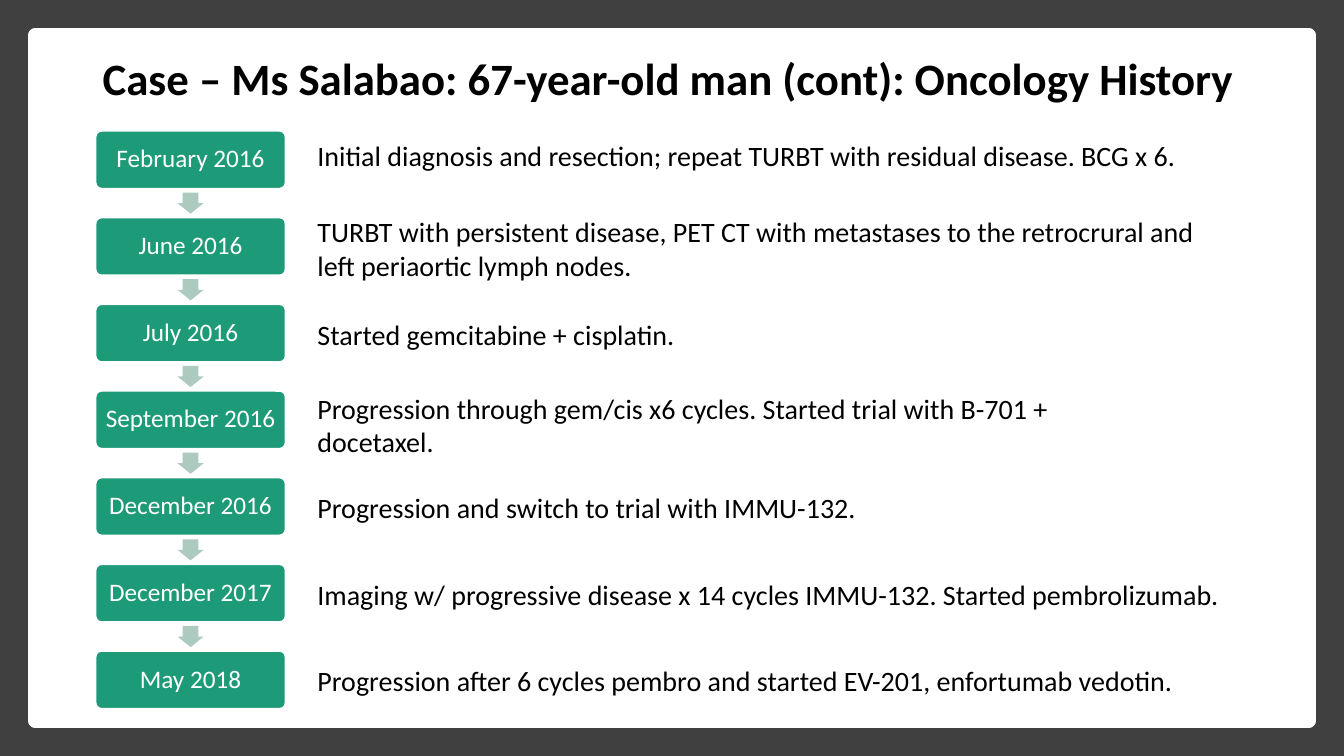
from pptx import Presentation
from pptx.dml.color import RGBColor
from pptx.enum.shapes import MSO_SHAPE
from pptx.enum.text import MSO_ANCHOR, PP_ALIGN
from pptx.util import Inches, Pt

WIDE, HIGH = 13.33, 7.5
EDGE = 0.35            # dark frame around the page
LEFT, TOP = 0.95, 1.3  # first date box
PITCH = 0.86           # distance from row to row
BOX_W, BOX_H = 1.88, 0.57
ARROW_W, ARROW_H = 0.21, 0.26
NOTE_X = 3.05

# Date, note, note top relative to its row, note width, note height
STEPS = [
    ("February 2016", "Initial diagnosis and resection; repeat TURBT with "
     "residual disease. BCG x 6.", 0.03, 8.8, 0.44),
    ("June 2016", "TURBT with persistent disease, PET CT with metastases to "
     "the retrocrural and left periaortic lymph nodes.", -0.08, 9.09, 0.77),
    ("July 2016", "Started gemcitabine + cisplatin.", 0.08, 6.37, 0.44),
    ("September 2016", "Progression through gem/cis x6 cycles. Started trial "
     "with B-701 + docetaxel.", -0.05, 8.17, 1.08),
    ("December 2016", "Progression and switch to trial with IMMU-132.",
     0.08, 5.58, 0.44),
    ("December 2017", "Imaging w/ progressive disease x 14 cycles IMMU-132. "
     "Started pembrolizumab.", 0.08, 9.23, 0.44),
    ("May 2018", "Progression after 6 cycles pembro and started EV-201, "
     "enfortumab vedotin.", 0.07, 8.78, 0.44),
]


def paint(code):
    return RGBColor.from_string(code)


def shape(slide, kind, x, y, w, h, fill, line=None):
    item = slide.shapes.add_shape(
        kind, Inches(x), Inches(y), Inches(w), Inches(h))
    item.shadow.inherit = False
    item.fill.solid()
    item.fill.fore_color.rgb = paint(fill)
    if line:
        item.line.color.rgb = paint("FFFFFF")
        item.line.width = Pt(line)
    else:
        item.line.fill.background()
    return item


def write(frame, text, size, color="000000", bold=False):
    frame.word_wrap = True
    para = frame.paragraphs[0]
    run = para.add_run()
    run.text = text
    font = run.font
    font.name, font.size, font.bold = "Calibri", Pt(size), bold
    font.color.rgb = paint(color)
    return para


def label(slide, x, y, w, h):
    box = slide.shapes.add_textbox(
        Inches(x), Inches(y), Inches(w), Inches(h))
    return box.text_frame


def date(slide, y, text):
    box = shape(slide, MSO_SHAPE.ROUNDED_RECTANGLE,
                LEFT, y, BOX_W, BOX_H, "1D9A78", 1)
    box.adjustments[0] = 0.1
    frame = box.text_frame
    frame.margin_left = frame.margin_right = Inches(0.08)
    frame.margin_top = frame.margin_bottom = Inches(0.07)
    frame.vertical_anchor = MSO_ANCHOR.MIDDLE
    para = write(frame, text, 18, "FFFFFF")
    para.alignment = PP_ALIGN.CENTER
    para.line_spacing = 0.9


def arrow(slide, y):
    # Centred in the gap between two date boxes
    x = LEFT + (BOX_W - ARROW_W) / 2
    gap = PITCH - BOX_H
    item = shape(slide, MSO_SHAPE.RIGHT_ARROW, x,
                 y + BOX_H + (gap - ARROW_H) / 2,
                 ARROW_W, ARROW_H, "ACCABE")
    item.adjustments[0] = 0.6
    item.adjustments[1] = 0.5
    item.rotation = 90


def main():
    deck = Presentation()
    deck.slide_width, deck.slide_height = Inches(WIDE), Inches(HIGH)
    slide = deck.slides.add_slide(deck.slide_layouts[6])

    # Dark frame and white page
    shape(slide, MSO_SHAPE.RECTANGLE, 0, 0, WIDE, HIGH, "404040")
    shape(slide, MSO_SHAPE.RECTANGLE, EDGE, EDGE,
          WIDE - 2 * EDGE, HIGH - 2 * EDGE, "FFFFFF", 10)

    # Timeline with one note per date
    for row, (when, note, shift, w, h) in enumerate(STEPS):
        y = TOP + row * PITCH
        date(slide, y, when)
        if row < len(STEPS) - 1:
            arrow(slide, y)
        write(label(slide, NOTE_X, y + shift, w, h), note, 20)

    # Title
    head = label(slide, 0.92, 0.08, 11.5, 1.45)
    head.vertical_anchor = MSO_ANCHOR.MIDDLE
    para = write(
        head, "Case – Ms Salabao: 67-year-old man (cont): Oncology History",
        32, bold=True)
    para.line_spacing = 0.9

    deck.save("out.pptx")


if __name__ == "__main__":
    main()
